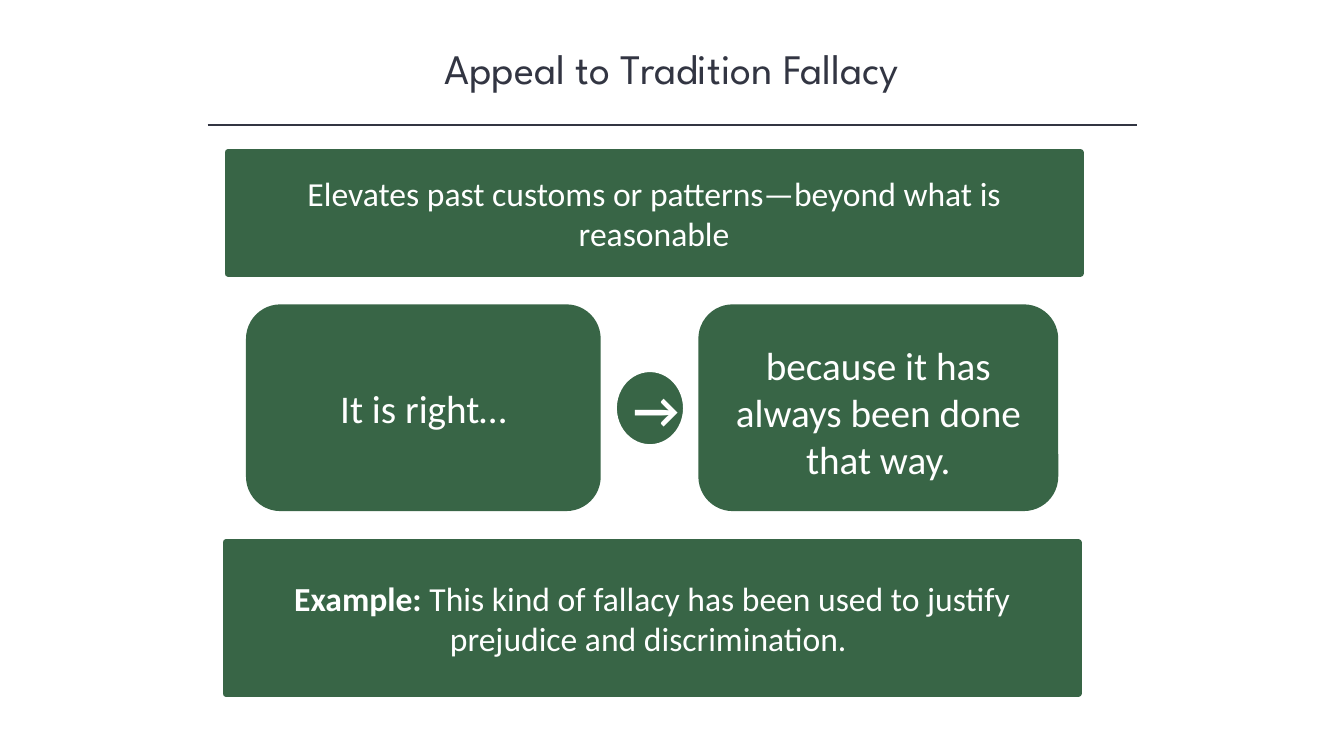
"""Build a slide that explains the appeal to tradition fallacy."""
from lxml.etree import SubElement
from pptx import Presentation
from pptx.dml.color import RGBColor
from pptx.enum.shapes import MSO_CONNECTOR, MSO_SHAPE
from pptx.enum.text import MSO_ANCHOR, PP_ALIGN
from pptx.oxml.ns import qn
from pptx.util import Cm, Pt

HUES = {"ink": "323542", "green": "386546", "white": "FFFFFF"}


def hue(name):
    """Return a named colour."""
    return RGBColor.from_string(HUES[name])


def write(frame, runs, size, tint="white", font="Calibri"):
    """Fill a frame with one centred paragraph of (text, bold) runs."""
    frame.word_wrap = True
    para = frame.paragraphs[0]
    para.alignment = PP_ALIGN.CENTER
    for text, bold in runs:
        run = para.add_run()
        run.text = text
        run.font.size = Pt(size)
        run.font.name = font
        run.font.bold = bold
        run.font.color.rgb = hue(tint)


def add_title(slide, text):
    """Add the heading."""
    box = slide.shapes.add_textbox(Cm(4.24), Cm(0.94), Cm(25.4), Cm(1.55))
    write(box.text_frame, [(text, False)], 30, "ink", "League Spartan")


def add_rule(slide, left, right, top):
    """Add a thin level line."""
    rule = slide.shapes.add_connector(
        MSO_CONNECTOR.STRAIGHT, Cm(left), Cm(top), Cm(right), Cm(top))
    rule.line.color.rgb = hue("ink")
    rule.line.width = Pt(1)
    SubElement(rule._element.spPr, qn("a:effectLst"))


def add_block(slide, kind, area, runs, size, edge=None, side=0.25, drop=0.13):
    """Add a green shape with text; edge is (colour, points)."""
    block = slide.shapes.add_shape(kind, *[Cm(n) for n in area])
    block.shadow.inherit = False
    block.fill.solid()
    block.fill.fore_color.rgb = hue("green")
    if edge:
        block.line.color.rgb = hue(edge[0])
        block.line.width = Pt(edge[1])
    else:
        block.line.fill.background()
    frame = block.text_frame
    frame.vertical_anchor = MSO_ANCHOR.MIDDLE
    frame.margin_left = frame.margin_right = Cm(side)
    frame.margin_top = Cm(drop)
    write(frame, runs, size)


def main():
    """Build and save the slide."""
    deck = Presentation()
    deck.slide_width, deck.slide_height = Cm(33.87), Cm(19.05)
    slide = deck.slides.add_slide(deck.slide_layouts[6])
    rect, pill = MSO_SHAPE.RECTANGLE, MSO_SHAPE.ROUNDED_RECTANGLE
    rim = ("green", 4.5)

    add_title(slide, "Appeal to Tradition Fallacy")
    add_rule(slide, 5.23, 28.65, 3.15)
    add_block(slide, rect, (5.74, 3.84, 21.49, 3.05), [
        ("Elevates past customs or patterns—beyond what is reasonable", False),
    ], 24, rim, side=1.26)
    add_block(slide, pill, (6.2, 7.67, 8.94, 5.21),
              [("It is right…", False)], 28)
    add_block(slide, pill, (17.6, 7.67, 9.07, 5.21),
              [("because it has always been done that way.", False)],
              28, side=0.5, drop=0.35)
    add_block(slide, MSO_SHAPE.OVAL, (15.44, 9.27, 1.88, 2.03),
              [("→", True)], 36, ("white", 6))
    add_block(slide, rect, (5.69, 13.67, 21.49, 3.81), [
        ("Example: ", True),
        ("This kind of fallacy has been used to justify prejudice and "
         "discrimination. ", False),
    ], 24, rim)
    deck.save("out.pptx")


if __name__ == "__main__":
    main()
